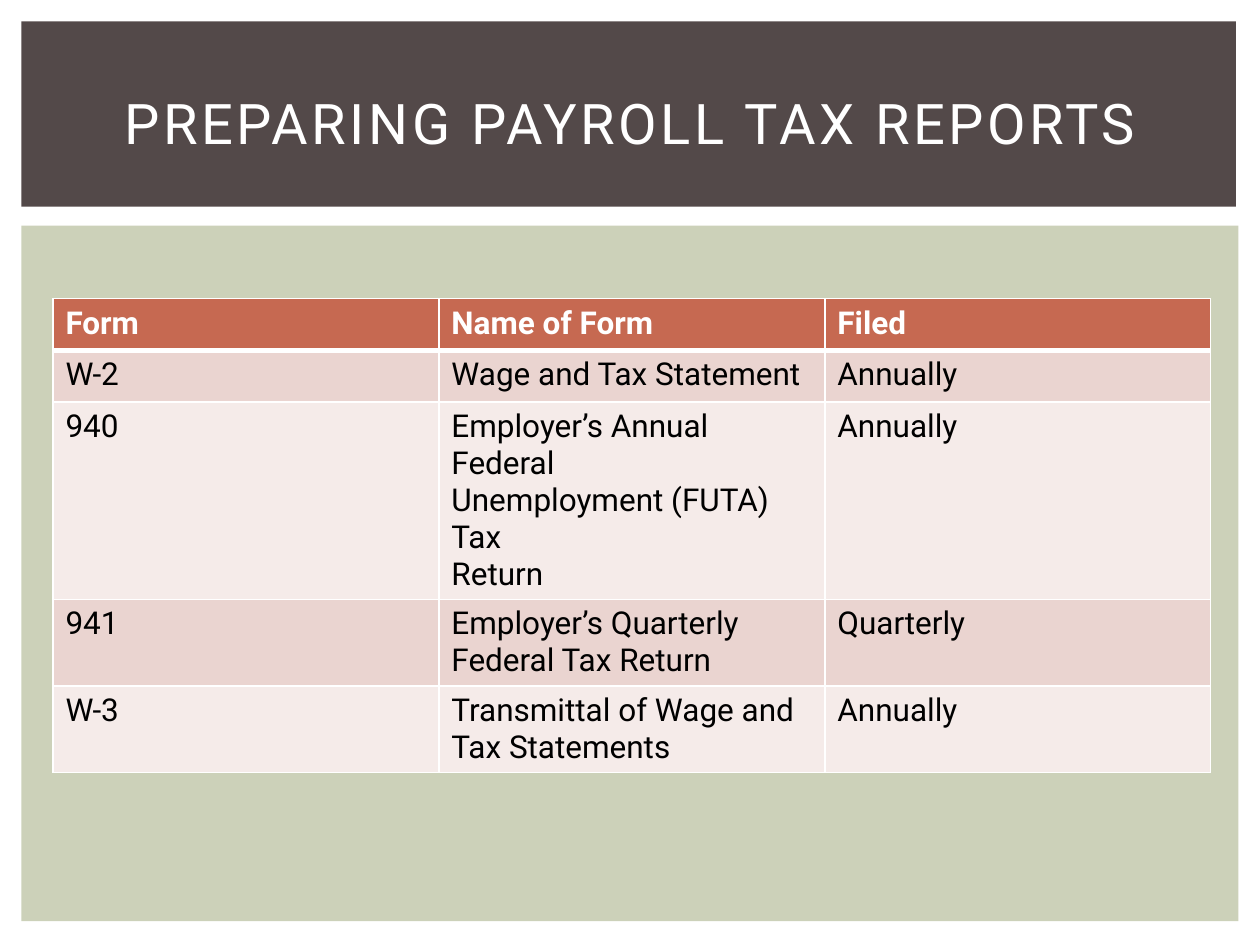
from lxml.etree import SubElement
from pptx import Presentation
from pptx.dml.color import RGBColor as RGB
from pptx.enum.shapes import MSO_SHAPE as SHAPE
from pptx.enum.text import MSO_ANCHOR as ANCHOR, MSO_AUTO_SIZE as AUTO, PP_ALIGN as ALIGN
from pptx.oxml.ns import qn
from pptx.util import Inches, Pt

FONT = "Roboto"
COLORS = {
    "white": "FFFFFF",
    "black": "000000",
    "band": "534949",
    "panel": "CCD1B9",
    "head": "C66951",
    "odd": "EAD4D0",
    "even": "F5EBE9",
}
ROWS = [
    ("Form", "Name of Form", "Filed"),
    ("W-2", "Wage and Tax Statement", "Annually"),
    ("940", "Employer’s Annual Federal\nUnemployment (FUTA) Tax\nReturn", "Annually"),
    ("941", "Employer’s Quarterly Federal Tax Return", "Quarterly"),
    ("W-3", "Transmittal of Wage and Tax Statements", "Annually"),
]


def color(name):
    return RGB.from_string(COLORS[name])


def set_font(par, size, tint, bold=False):
    font = par.font
    font.name, font.size, font.bold = FONT, Pt(size), bold
    font.color.rgb = color(tint)


def add_rect(slide, box, tint):
    rect = slide.shapes.add_shape(SHAPE.RECTANGLE, *map(Inches, box))
    rect.shadow.inherit = False
    rect.fill.solid()
    rect.fill.fore_color.rgb = color(tint)
    rect.line.fill.background()


def add_header(slide, box):
    left, top, width, height = box
    add_rect(slide, box, "band")
    title = slide.shapes.title
    title.left, title.top = Inches(left + 0.25), Inches(top + 0.22)
    title.width, title.height = Inches(width - 0.47), Inches(height - 0.32)
    title.element.getparent().append(title.element)
    frame = title.text_frame
    frame.text = "PREPARING PAYROLL TAX REPORTS"
    frame.word_wrap, frame.auto_size = True, AUTO.NONE
    frame.vertical_anchor = ANCHOR.MIDDLE
    par = frame.paragraphs[0]
    par.alignment = ALIGN.CENTER
    set_font(par, 32, "white")
    par.runs[0].font._element.set("spc", "200")


def set_edges(cell, row):
    props = cell._tc.get_or_add_tcPr()
    widths = {"L": 1, "R": 1, "T": 3 if row == 1 else 1, "B": 3 if row == 0 else 1}
    for side, width in widths.items():
        line = SubElement(props, qn(f"a:ln{side}"), w=str(Pt(width)))
        fill = SubElement(line, qn("a:solidFill"))
        SubElement(fill, qn("a:srgbClr"), val=COLORS["white"])


def fill_cell(cell, text, row):
    set_edges(cell, row)
    head = row == 0
    cell.fill.solid()
    cell.fill.fore_color.rgb = color("head" if head else "odd" if row % 2 else "even")
    cell.text_frame.text = text
    for par in cell.text_frame.paragraphs:
        set_font(par, 18, "white" if head else "black", head)


def add_forms(slide, box):
    left, top, width, height = box
    add_rect(slide, box, "panel")
    row_h = 0.41
    frame = slide.shapes.add_table(
        len(ROWS), len(ROWS[0]), Inches(left + 0.25), Inches(top + 0.58),
        Inches(width - 0.47), Inches(row_h * len(ROWS)))
    for row, texts in enumerate(ROWS):
        for col, text in enumerate(texts):
            fill_cell(frame.table.cell(row, col), text, row)


def main():
    deck = Presentation()
    deck.slide_width, deck.slide_height = Inches(10), Inches(7.5)
    slide = deck.slides.add_slide(deck.slide_layouts[5])
    add_forms(slide, (0.17, 1.79, 9.66, 5.52))
    add_header(slide, (0.17, 0.17, 9.64, 1.47))
    deck.save("out.pptx")


if __name__ == "__main__":
    main()
